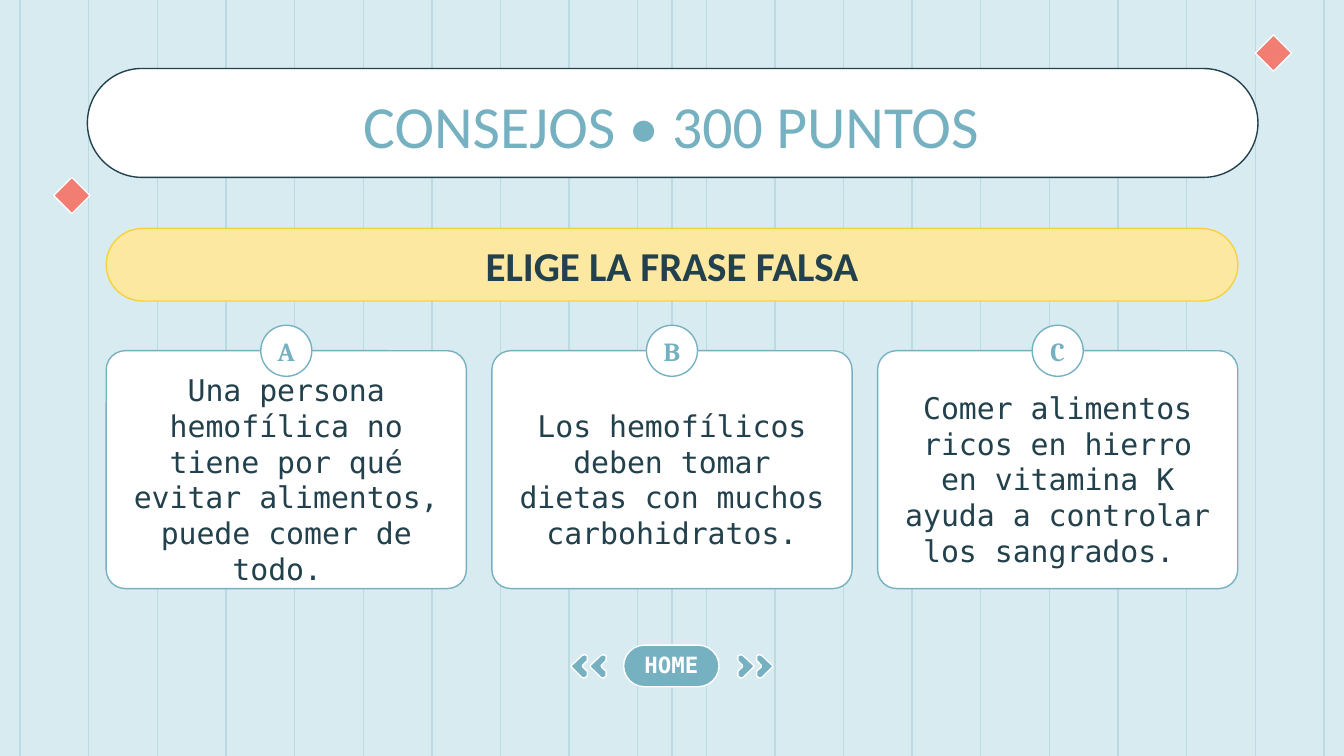
from dataclasses import dataclass
from pptx import Presentation
from pptx import util as u
from pptx.dml.color import RGBColor
from pptx.enum import shapes, text
from pptx.oxml.ns import qn
from lxml import etree

COLORS = {
    "sky": "D8EBF0", "stripe": "BCDAE2", "white": "FFFFFF", "ink": "23414C",
    "teal": "76B1C1", "coral": "F27D72", "cream": "FDE8A1", "gold": "F7D23F",
}
FORMATS = {
    "title": {"name": "Calibri", "size": u.Pt(32)},
    "question": {"name": "Calibri", "size": u.Pt(22), "bold": True},
    "answer": {"name": "DejaVu Sans Mono", "size": u.Pt(16)},
    "letter": {"name": "Cambria", "size": u.Pt(14), "bold": True},
    "home": {"name": "DejaVu Sans Mono", "size": u.Pt(12), "bold": True},
}
ANSWERS = {
    "A": "Una persona hemofílica no tiene por qué evitar alimentos, puede comer de todo. ",
    "B": "Los hemofílicos deben tomar dietas con muchos carbohidratos.",
    "C": "Comer alimentos ricos en hierro en vitamina K ayuda a controlar los sangrados. ",
}
CHEVRON = [(40, 0), (20, 12), (20, 45), (55, 80), (55, 92), (20, 125), (20, 160),
           (40, 175), (60, 170), (138, 93), (138, 82), (60, 8)]
CHEVRON_WIDTH = 140
SLIDE_WIDTH = u.Inches(10)
SLIDE_HEIGHT = SLIDE_WIDTH * 9 // 16
KIND = shapes.MSO_SHAPE


@dataclass
class Box:
    left: float
    top: float
    width: float
    height: float

    def inches(self) -> list:
        return [u.Inches(v) for v in (self.left, self.top, self.width, self.height)]


@dataclass
class Label:
    words: str
    style: str
    color: str
    insets: tuple = (0.1, 0.1, 0.1, 0.1)


def rgb(name: str) -> RGBColor:
    return RGBColor.from_string(COLORS[name])


def paint(sp, fill: str, line: str) -> None:
    sp.shadow.inherit = False
    sp.fill.solid()
    sp.fill.fore_color.rgb = rgb(fill)
    sp.line.color.rgb = rgb(line)
    sp.line.width = u.Pt(0.75)


def write(sp, label: Label, anchor=text.MSO_ANCHOR.MIDDLE) -> None:
    tf = sp.text_frame
    sides = ("left", "top", "right", "bottom")
    frame = {f"margin_{side}": u.Inches(v) for side, v in zip(sides, label.insets)}
    frame |= {"word_wrap": True, "vertical_anchor": anchor}
    for key, value in frame.items():
        setattr(tf, key, value)
    p = tf.paragraphs[0]
    p.alignment = text.PP_ALIGN.CENTER
    r = p.add_run()
    r.text = label.words
    for key, value in FORMATS[label.style].items():
        setattr(r.font, key, value)
    r.font.color.rgb = rgb(label.color)


def add_shape(s, kind, box: Box, fill: str, line: str,
              label: Label | None = None, rounding: float | None = None) -> None:
    sp = s.shapes.add_shape(kind, *box.inches())
    paint(sp, fill, line)
    if rounding is not None:
        sp.adjustments[0] = rounding
    if label:
        write(sp, label)


def add_stripe(s, x: float) -> None:
    ln = s.shapes.add_connector(shapes.MSO_CONNECTOR.STRAIGHT,
                                u.Inches(x), 0, u.Inches(x), SLIDE_HEIGHT)
    ln.line.color.rgb = rgb("stripe")
    ln.line.width = u.Pt(0.75)
    etree.SubElement(ln._element.spPr, qn("a:effectLst"))


def add_chevron(s, left: float, top: float, forward: bool) -> None:
    points = [(x if forward else CHEVRON_WIDTH - x, y) for x, y in CHEVRON]
    fb = s.shapes.build_freeform(*points[0], scale=u.Inches(1) / 1000)
    fb.add_line_segments(points[1:], close=True)
    sp = fb.convert_to_shape(u.Inches(left), u.Inches(top))
    paint(sp, "teal", "white")


def main() -> None:
    prs = Presentation()
    prs.slide_width, prs.slide_height = SLIDE_WIDTH, SLIDE_HEIGHT
    s = prs.slides.add_slide(prs.slide_layouts[6])
    s.background.fill.solid()
    s.background.fill.fore_color.rgb = rgb("sky")

    add_stripe(s, 5)
    for i in range(20):
        add_stripe(s, 0.15 + i * 9.7 / 19)

    add_shape(s, KIND.ROUNDED_RECTANGLE, Box(0.65, 0.51, 8.71, 0.81), "white", "ink",
              rounding=0.5)
    for left, top in ((0.4, 1.32), (9.34, 0.26)):
        add_shape(s, KIND.DIAMOND, Box(left, top, 0.27, 0.27), "coral", "white")
    title = s.shapes.add_textbox(*Box(1.31, 0.56, 7.37, 0.65).inches())
    write(title, Label("CONSEJOS • 300 PUNTOS", "title", "teal"), text.MSO_ANCHOR.TOP)

    add_shape(s, KIND.ROUNDED_RECTANGLE, Box(0.79, 1.7, 8.42, 0.54), "cream", "gold",
              Label("ELIGE LA FRASE FALSA", "question", "ink", (0.3, 0.1, 0.3, 0.1)), 0.5)

    for i, (letter, answer) in enumerate(ANSWERS.items()):
        left = 0.79 + 2.87 * i
        add_shape(s, KIND.ROUNDED_RECTANGLE, Box(left, 2.61, 2.68, 1.77), "white", "teal",
                  Label(answer, "answer", "ink", (0.1, 0.24, 0.1, 0.1)), 0.08)
        add_shape(s, KIND.OVAL, Box(left + 1.15, 2.42, 0.38, 0.38), "white", "teal",
                  Label(letter, "letter", "teal", (0, 0.1, 0, 0.1)))

    add_shape(s, KIND.ROUNDED_RECTANGLE, Box(4.64, 4.8, 0.71, 0.31), "teal", "white",
              Label("HOME", "home", "white", (0.1, 0.08, 0.1, 0.1)), 0.5)
    for left, forward in ((4.25, False), (4.39, False), (5.47, True), (5.61, True)):
        add_chevron(s, left, 4.87, forward)

    prs.save("out.pptx")


if __name__ == "__main__":
    main()
